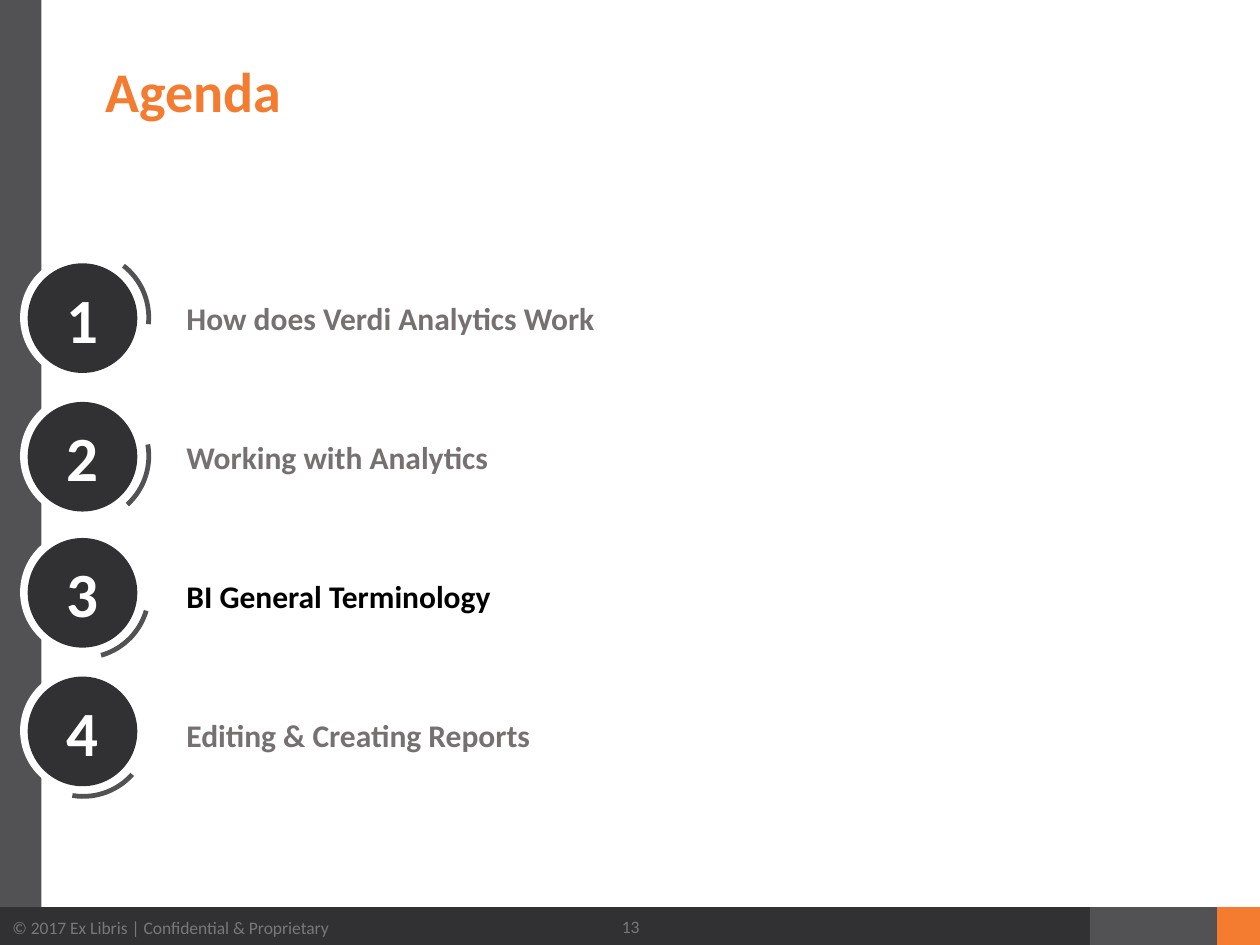
from pptx import Presentation
from pptx.dml.color import RGBColor
from pptx.enum.shapes import MSO_SHAPE as Shape
from pptx.enum.text import MSO_ANCHOR as Anchor, PP_ALIGN as Align
from pptx.util import Inches, Pt

DARK, GRAY, ORANGE, WHITE = "313133", "525254", "F47C30", "FFFFFF"
MUTED, FAINT = "767171", "787878"

# label, colour, badge top, arc turn in degrees
ITEMS = [
    ("How does Verdi Analytics Work", MUTED, 2.02, 5.1),
    ("Working with Analytics", MUTED, 3.12, 47),
    ("BI General Terminology", "000000", 4.2, 73.5),
    ("Editing & Creating Reports", MUTED, 5.3, 98.8),
]
LABEL_TOP, LABEL_STEP = 2.17, 1.105


def color(code):
    return RGBColor.from_string(code)


def write(shape, text, size, code, bold=False, align=Align.LEFT,
          anchor=Anchor.MIDDLE, spacing=None, inset=None):
    frame = shape.text_frame
    frame.word_wrap = True
    frame.vertical_anchor = anchor
    if inset is not None:
        frame.margin_left = frame.margin_right = Inches(inset)
        frame.margin_top = frame.margin_bottom = Inches(inset)
    para = frame.paragraphs[0]
    para.alignment = align
    para.line_spacing = spacing
    run = para.add_run()
    run.text = text
    font = run.font
    font.name, font.size, font.bold = "Calibri", Pt(size), bold
    font.color.rgb = color(code)


def add_text(slide, box, text, **form):
    write(slide.shapes.add_textbox(*map(Inches, box)), text, **form)


def add_shape(parent, kind, box, fill):
    shape = parent.shapes.add_shape(kind, *map(Inches, box))
    shape.shadow.inherit = False
    shape.fill.solid()
    shape.fill.fore_color.rgb = color(fill)
    shape.line.fill.background()
    return shape


def add_frame(slide, width, height):
    """Draw the left band and the footer bar with its number."""
    top, bar = height - 0.3, 0.32
    foot = add_shape(slide, Shape.RECTANGLE, (0, top, 8.65, bar), DARK)
    write(foot, "© 2017 Ex Libris | Confidential & Proprietary",
          size=10, code=FAINT)
    add_shape(slide, Shape.RECTANGLE, (8.65, top, 1.01, bar), GRAY)
    add_shape(slide, Shape.RECTANGLE, (width - 0.34, top, 0.34, bar), ORANGE)
    add_shape(slide, Shape.RECTANGLE, (0, 0, 0.33, top), GRAY)
    add_text(slide, (4.42, top - 0.04, 1.17, 0.39), "13", size=10,
             code=FAINT, align=Align.CENTER)


def add_badge(slide, left, top, number, turn):
    """Draw a numbered disc with a white rim and an arc turned around it."""
    group = slide.shapes.add_group_shape()
    add_shape(group, Shape.OVAL, (left, top, 1, 1), WHITE)
    arc = add_shape(group, Shape.BLOCK_ARC,
                    (left - 0.04, top - 0.04, 1.08, 1.08), GRAY)
    for i, value in enumerate((181.725, 0.424, 0.035)):
        arc.adjustments[i] = value
    arc.rotation = turn
    disc = add_shape(group, Shape.OVAL,
                     (left + 0.06, top + 0.07, 0.87, 0.87), DARK)
    write(disc, str(number), size=36, code=WHITE, bold=True,
          align=Align.CENTER)


def add_agenda(slide, left):
    for i, (label, code, top, turn) in enumerate(ITEMS):
        add_badge(slide, left, top, i + 1, turn)
        box = (left + 1.27, LABEL_TOP + i * LABEL_STEP, 6.07, 0.7)
        add_text(slide, box, label, size=18, code=code, bold=True, inset=0.05)


def main():
    deck = Presentation()
    deck.slide_width, deck.slide_height = Inches(10), Inches(7.5)
    slide = deck.slides.add_slide(deck.slide_layouts[6])
    add_frame(slide, 10, 7.5)
    add_text(slide, (0.74, 0.46, 8.5, 1.19), "Agenda", size=32, code=ORANGE,
             bold=True, anchor=Anchor.TOP, spacing=0.9)
    add_agenda(slide, 0.16)
    deck.save("out.pptx")


if __name__ == "__main__":
    main()
